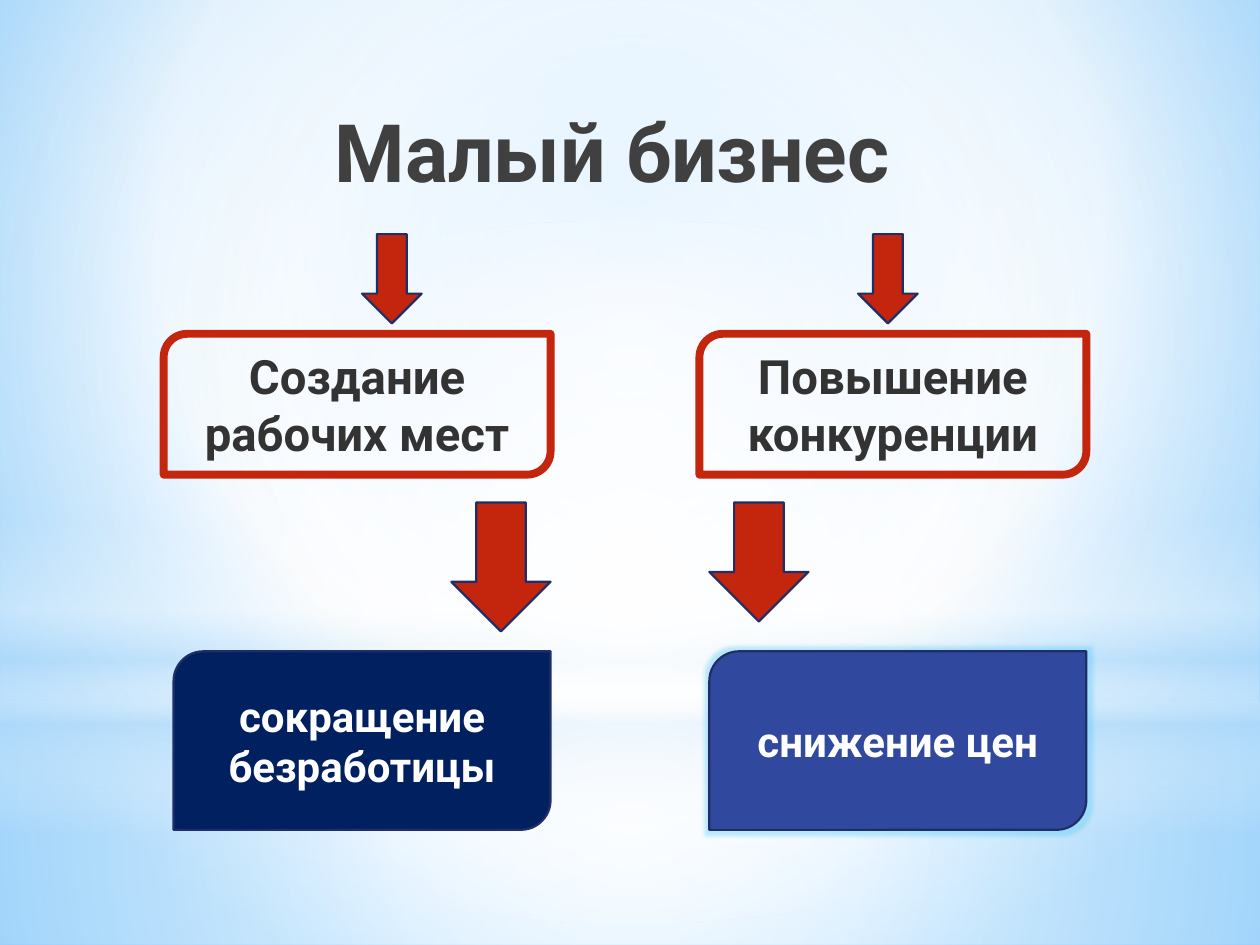
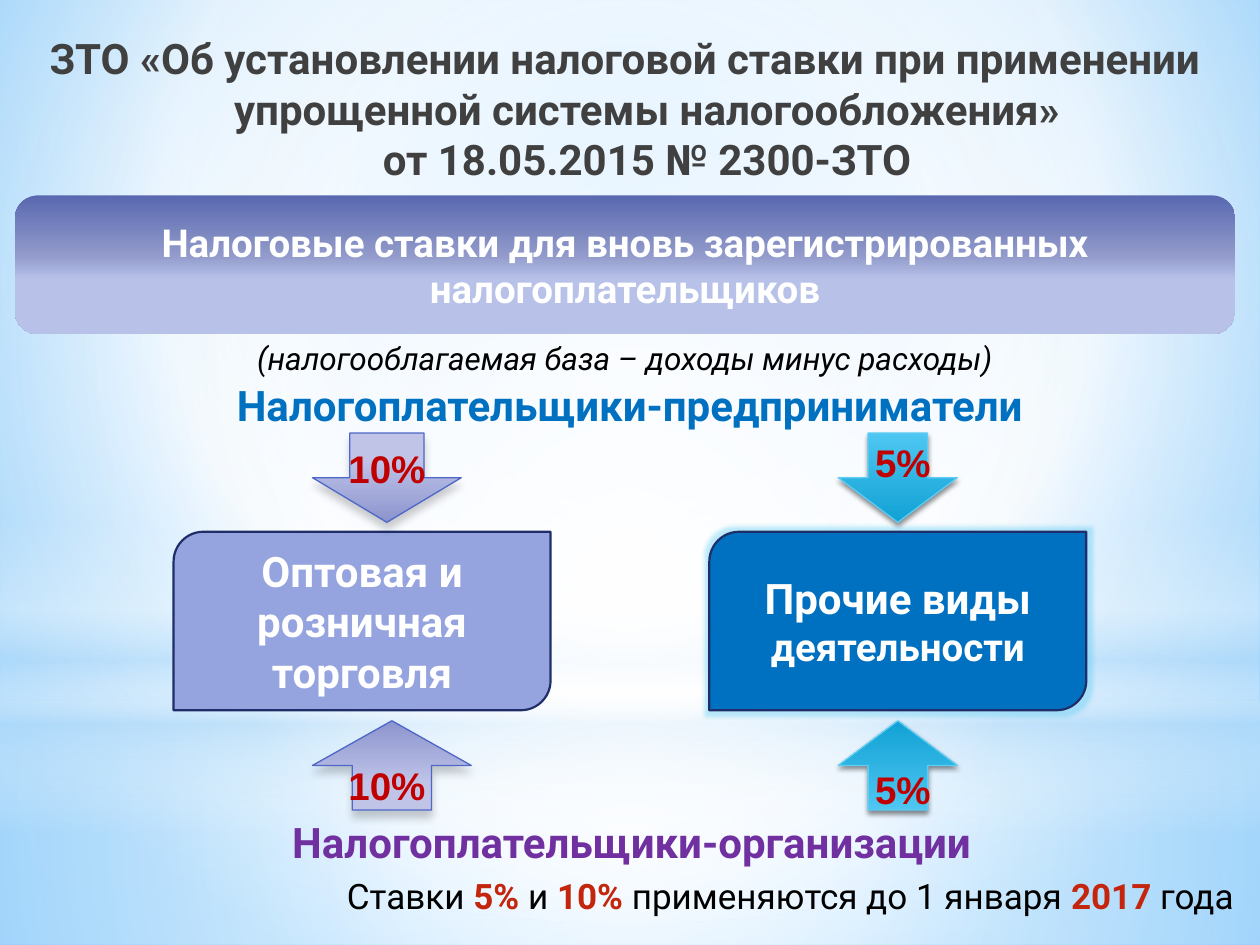
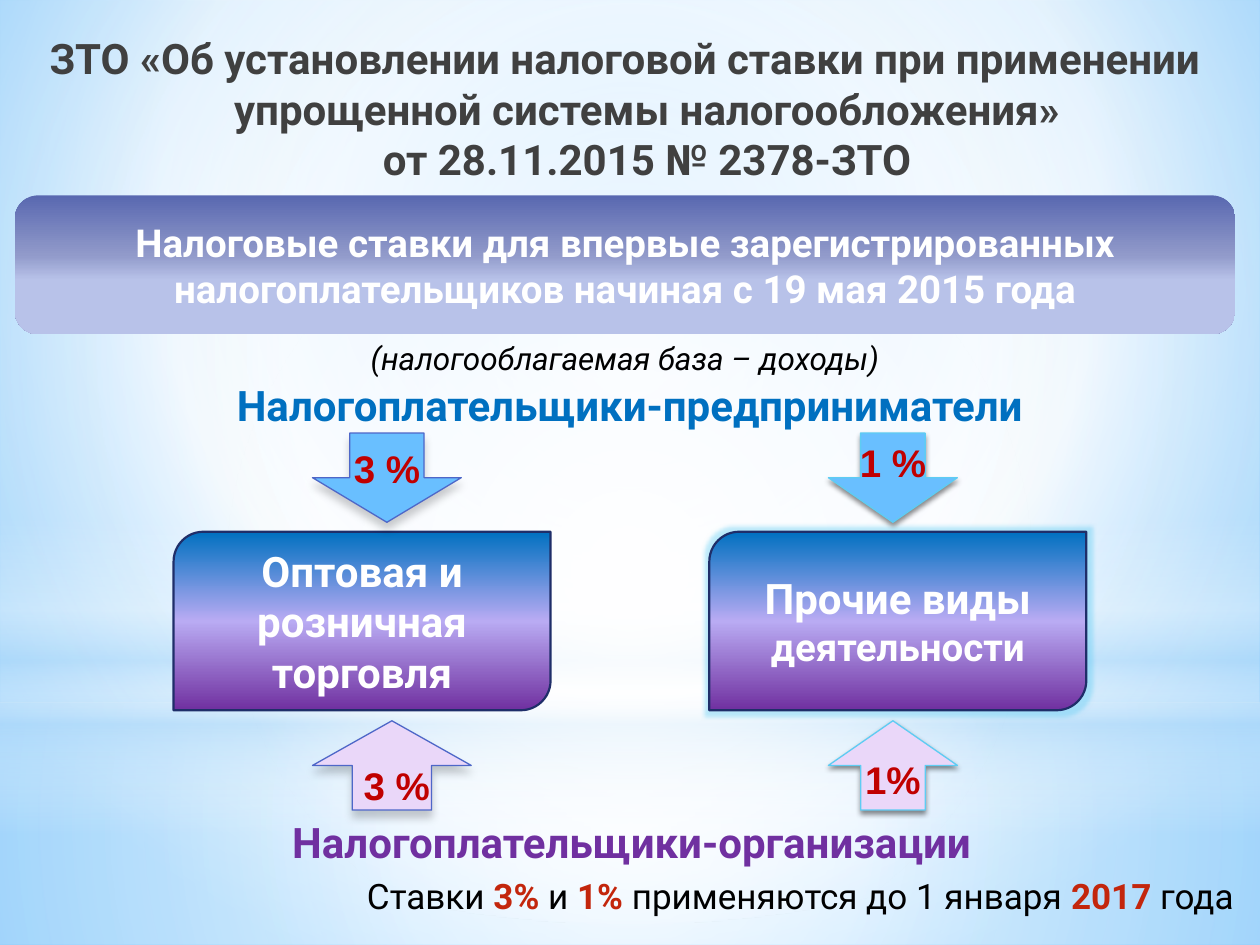
from dataclasses import dataclass
from typing import NamedTuple, Optional, Union

from lxml import etree
from pptx import Presentation, util as u
from pptx.dml.color import RGBColor
from pptx.enum import shapes, text
from pptx.oxml.ns import qn

CARD = shapes.MSO_SHAPE.ROUND_2_DIAG_RECTANGLE
ARROW = shapes.MSO_SHAPE.DOWN_ARROW
RECTANGLE = shapes.MSO_SHAPE.RECTANGLE
CENTER = text.PP_ALIGN.CENTER
RIGHT = text.PP_ALIGN.RIGHT
TOP = text.MSO_ANCHOR.TOP
MIDDLE = text.MSO_ANCHOR.MIDDLE


class Stop(NamedTuple):
    position: int
    color: str
    opacity: int = 100


class Gradient(NamedTuple):
    stops: tuple[Stop, ...]
    focus: Optional[tuple[int, int, int, int]] = None


Fill = Union[str, Gradient, None]


class Box(NamedTuple):
    left: float
    top: float
    width: float
    height: float

    def lengths(self) -> list[u.Length]:
        return [u.Cm(value) for value in self]


class Line(NamedTuple):
    color: str
    width: float


class Shadow(NamedTuple):
    opacity: int
    blur: float
    distance: float


class Style(NamedTuple):
    size: float
    color: str
    bold: bool = True
    italic: bool = False
    font: str = "Roboto"
    align: text.PP_ALIGN = CENTER
    spacing: Optional[float] = None


class Run(NamedTuple):
    text: str
    size: Optional[float] = None
    color: Optional[str] = None
    bold: Optional[bool] = None


CENTERED = (50, 50, 50, 50)


@dataclass(frozen=True)
class Theme:
    red: str = "C3260C"
    navy: str = "002060"
    indigo: str = "31489F"
    lavender: str = "95A4DE"
    blue: str = "0070C0"
    sky: str = "69BFFF"
    lilac: str = "EAD7F9"
    glow: str = "5ECCF3"
    outline: Line = Line("1F2E69", 1.25)
    frame: Line = Line("C3260C", 4.5)
    left_outline: Line = Line("4E67C8", 0.75)
    right_outline: Line = Line("5ECCF3", 0.75)
    left_shadow: Shadow = Shadow(20, 5, 4)
    right_shadow: Shadow = Shadow(45, 3.1, 1.8)
    main_title: Style = Style(46, "404040", align=RIGHT)
    law_title: Style = Style(24, "404040")
    framed: Style = Style(27, "333333")
    card: Style = Style(24, "FFFFFF")
    banner: Style = Style(22, "FFFFFF")
    tax_base: Style = Style(18, "000000", bold=False, italic=True)
    entrepreneurs: Style = Style(24, "0070C0", spacing=1.5)
    organizations: Style = Style(24, "7030A0", spacing=1.5)
    rate: Style = Style(22, "C00000", font="Arial")
    footer: Style = Style(20, "000000", bold=False, align=RIGHT)
    small_card: float = 22
    background: Gradient = Gradient(
        (Stop(0, "9ED5FF"), Stop(60, "FFFFFF"), Stop(100, "5BB9FF")), (20, 10, 20, 60))
    floor: Gradient = Gradient(
        (Stop(0, "FFFFFF", 91), Stop(37, "FFFFFF", 76), Stop(100, "B4DCFA", 79)), CENTERED)
    wall: Gradient = Gradient(
        (Stop(0, "FFFFFF", 89), Stop(48, "FFFFFF", 62), Stop(100, "B4DCFA", 79)), CENTERED)
    horizon: Gradient = Gradient(
        (Stop(0, "FFFFFF", 0), Stop(29, "FFFFFF", 30), Stop(45, "B4DCFA", 40),
         Stop(55, "FFFFFF", 26), Stop(65, "B4DCFA", 60), Stop(100, "FFFFFF", 0)))
    halo: Gradient = Gradient((Stop(0, "FFFFFF"), Stop(56, "FFFFFF", 0)), CENTERED)
    banner_fill: Gradient = Gradient(
        (Stop(0, "5968B0"), Stop(43, "919ACA"), Stop(61, "B8C2E9"), Stop(78, "B8C2E9")))
    violet_arrow: Gradient = Gradient((Stop(28, "C0C5E8"), Stop(100, "8C94CE")))
    cyan_arrow: Gradient = Gradient((Stop(0, "4EC7F2"), Stop(100, "11A1D4")))
    sunset: Gradient = Gradient((Stop(0, "0070C0"), Stop(50, "B9ABF3"), Stop(100, "7030A0")))


THEME = Theme()


@dataclass(frozen=True)
class RateArrow:
    box: Box
    fill: Fill
    label: str
    label_box: Box
    upward: bool = False


@dataclass(frozen=True)
class RateSlide:
    title: tuple[str, ...]
    banner: str
    tax_base: str
    card_fills: tuple[Fill, Fill]
    left_arrows: tuple[RateArrow, RateArrow]
    right_arrows: tuple[RateArrow, RateArrow]
    footer: tuple[Run, ...]


def add_color(parent, color: str, opacity: int = 100) -> None:
    node = etree.SubElement(parent, qn("a:srgbClr"), val=color)
    if opacity < 100:
        etree.SubElement(node, qn("a:alpha"), val=str(opacity * 1000))


def apply_gradient(owner, gradient: Gradient) -> None:
    node = etree.Element(qn("a:gradFill"), rotWithShape="1")
    stop_list = etree.SubElement(node, qn("a:gsLst"))
    for stop in gradient.stops:
        item = etree.SubElement(stop_list, qn("a:gs"), pos=str(stop.position * 1000))
        add_color(item, stop.color, stop.opacity)
    if gradient.focus:
        path = etree.SubElement(node, qn("a:path"), path="circle")
        sides = {side: str(value * 1000) for side, value in zip("ltrb", gradient.focus)}
        etree.SubElement(path, qn("a:fillToRect"), sides)
    else:
        etree.SubElement(node, qn("a:lin"), ang="5400000", scaled="0")
    empty = owner.find(f".//{qn('a:noFill')}")
    empty.getparent().replace(empty, node)


def add_effect(shape, name: str, color: str, opacity: int, **lengths: str) -> None:
    effects = shape.element.find(f".//{qn('a:effectLst')}")
    add_color(etree.SubElement(effects, qn(name), lengths), color, opacity)


def add_glow(shape) -> None:
    add_effect(shape, "a:glow", THEME.glow, 40, rad=str(u.Pt(5)))


def add_shadow(shape, shadow: Shadow) -> None:
    add_effect(shape, "a:outerShdw", "000000", shadow.opacity,
               blurRad=str(u.Pt(shadow.blur)), dist=str(u.Pt(shadow.distance)),
               dir="5400000", rotWithShape="0")


def write(shape, runs: tuple[Run, ...], style: Style, anchor=MIDDLE,
          margins: Optional[tuple[float, float]] = None, breaks: bool = False) -> None:
    frame = shape.text_frame
    frame.word_wrap = True
    frame.auto_size = text.MSO_AUTO_SIZE.NONE
    frame.vertical_anchor = anchor
    if margins:
        frame.margin_left = frame.margin_right = u.Cm(margins[0])
        frame.margin_top = frame.margin_bottom = u.Cm(margins[1])
    paragraph = frame.paragraphs[0]
    paragraph.alignment = style.align
    if style.spacing:
        paragraph.line_spacing = style.spacing
    font = paragraph.font
    font.name, font.size = style.font, u.Pt(style.size)
    font.bold, font.italic = style.bold, style.italic
    font.color.rgb = RGBColor.from_string(style.color)
    for index, part in enumerate(runs):
        if breaks and index:
            paragraph.add_line_break()
        run = paragraph.add_run()
        run.text = part.text
        if part.size:
            run.font.size = u.Pt(part.size)
        if part.color:
            run.font.color.rgb = RGBColor.from_string(part.color)
        if part.bold is not None:
            run.font.bold = part.bold


def add_figure(slide, kind, box: Box, fill: Fill = None, line: Optional[Line] = None):
    shape = slide.shapes.add_shape(kind, *box.lengths())
    shape.shadow.inherit = False
    if isinstance(fill, str):
        shape.fill.solid()
        shape.fill.fore_color.rgb = RGBColor.from_string(fill)
    else:
        shape.fill.background()
        if fill:
            apply_gradient(shape.element, fill)
    if line:
        shape.line.color.rgb = RGBColor.from_string(line.color)
        shape.line.width = u.Pt(line.width)
    else:
        shape.line.fill.background()
    return shape


def add_label(slide, box: Box, runs: tuple[Run, ...], style: Style,
              margins: tuple[float, float] = (0.25, 0.13)) -> None:
    write(slide.shapes.add_textbox(*box.lengths()), runs, style, TOP, margins)


def set_title(slide, box: Box, lines: tuple[str, ...], style: Style):
    title = slide.shapes.title
    title.left, title.top, title.width, title.height = box.lengths()
    write(title, tuple(Run(line) for line in lines), style, TOP, (0.25, 0.13), breaks=True)
    hanging = u.Cm(0.89)
    properties = title.element.find(f".//{qn('a:pPr')}")
    properties.set("marL", str(hanging))
    properties.set("indent", str(-hanging))
    return title


def decorate_master(presentation, slide) -> None:
    master = presentation.slide_master
    master.background.fill.background()
    apply_gradient(master.element, THEME.background)
    layers = (
        (RECTANGLE, Box(0, 14.17, 25.4, 4.88), THEME.floor),
        (RECTANGLE, Box(0, 0, 25.4, 14.17), THEME.wall),
        (RECTANGLE, Box(0, 10.46, 25.4, 6.35), THEME.horizon),
        (shapes.MSO_SHAPE.OVAL, Box(0, 4.45, 25.4, 14.17), THEME.halo),
    )
    for index, layer in enumerate(layers, start=2):
        master.shapes.element.insert(index, add_figure(slide, *layer).element)


def add_cards(slide, top: float, fills: tuple[Fill, Fill],
              contents: tuple[tuple[Run, ...], ...]) -> None:
    for left, fill, runs in zip((3.5, 14.3), fills, contents):
        card = add_figure(slide, CARD, Box(left, top, 7.6, 3.6), fill, THEME.outline)
        write(card, runs, THEME.card)
    add_glow(card)


def build_business_slide(slide) -> None:
    title = set_title(slide, Box(0.5, 1.93, 18.1, 3.18), ("Малый бизнес",), THEME.main_title)
    title.text_frame.margin_right = u.Cm(0.67)
    for left, caption in ((3.3, "Создание рабочих мест"), (14.1, "Повышение конкуренции")):
        frame = add_figure(slide, CARD, Box(left, 6.73, 7.8, 2.84), None, THEME.frame)
        write(frame, (Run(caption),), THEME.framed)
    for box in (Box(7.3, 4.72, 1.2, 1.8), Box(17.3, 4.72, 1.2, 1.8),
                Box(9.1, 10.13, 2, 2.6), Box(14.3, 10.13, 2, 2.4)):
        add_figure(slide, ARROW, box, THEME.red, THEME.outline)
    add_cards(slide, 13.13, (THEME.navy, THEME.indigo),
              ((Run("сокращение безработицы"),), (Run("снижение цен"),)))


def add_rate_arrows(slide, arrows: tuple[RateArrow, ...], line: Line, shadow: Shadow) -> None:
    for arrow in arrows:
        shape = add_figure(slide, ARROW, arrow.box, arrow.fill, line)
        shape.rotation = 180 if arrow.upward else 0
        add_shadow(shape, shadow)
        add_label(slide, arrow.label_box, (Run(arrow.label),), THEME.rate, (0, 0.13))


def build_rate_slide(slide, content: RateSlide) -> None:
    set_title(slide, Box(0.5, 0.53, 24.2, 4.8), content.title, THEME.law_title)
    banner = add_figure(slide, shapes.MSO_SHAPE.ROUNDED_RECTANGLE,
                        Box(0.3, 3.94, 24.6, 2.8), THEME.banner_fill)
    write(banner, (Run(content.banner),), THEME.banner)
    add_label(slide, Box(3.7, 6.7, 17.8, 1.02), (Run(content.tax_base),), THEME.tax_base)
    add_label(slide, Box(4.1, 7.14, 17.2, 1), (Run("Налогоплательщики-предприниматели"),),
              THEME.entrepreneurs, (0, 0))
    add_label(slide, Box(3.3, 15.93, 18.87, 1.1), (Run("Налогоплательщики-организации"),),
              THEME.organizations, (0.03, 0.03))
    add_cards(slide, 10.72, content.card_fills,
              ((Run("Оптовая и розничная торговля"),),
               (Run("Прочие виды "), Run("деятельности", THEME.small_card))))
    add_rate_arrows(slide, content.left_arrows, THEME.left_outline, THEME.left_shadow)
    add_rate_arrows(slide, content.right_arrows, THEME.right_outline, THEME.right_shadow)
    add_label(slide, Box(2.5, 17.53, 22.6, 0.86), content.footer, THEME.footer, (0.23, 0.1))


def left_pair(fills: tuple[Fill, Fill], label: str, lower_label: float) -> tuple:
    return (RateArrow(Box(6.3, 8.73, 3, 1.8), fills[0], label, Box(6.3, 8.84, 3, 1.1)),
            RateArrow(Box(6.3, 14.53, 3.2, 1.8), fills[1], label,
                      Box(lower_label, 15.24, 3, 1.1), True))


def right_pair(fills: tuple[Fill, Fill], labels: tuple[str, str], left: float,
               width: float, lower_top: float) -> tuple:
    return (RateArrow(Box(left, 8.73, width, 1.8), fills[0], labels[0],
                      Box(left + 0.4, 8.73, 1.8, 1)),
            RateArrow(Box(left, 14.53, width, 1.8), fills[1], labels[1],
                      Box(left + 0.4, lower_top, 1.8, 1), True))


def footer_runs(first: str, second: str) -> tuple[Run, ...]:
    def accent(words: str) -> Run:
        return Run(words, color=THEME.red, bold=True)

    return (Run("Ставки "), accent(first), Run(" и "), accent(second),
            Run(" применяются до 1 января "), accent("2017 "), Run("года"))


LAW = "ЗТО «Об установлении налоговой ставки при применении упрощенной системы налогообложения»"
PASTEL = (THEME.sky, THEME.lilac)
RATE_SLIDES = (
    RateSlide(
        (LAW, "от 18.05.2015 № 2300-ЗТО"),
        "Налоговые ставки для вновь зарегистрированных налогоплательщиков",
        "(налогооблагаемая база – доходы минус расходы)",
        (THEME.lavender, THEME.blue),
        left_pair((THEME.violet_arrow,) * 2, "10%", 6.3),
        right_pair((THEME.cyan_arrow,) * 2, ("5%", "5%"), 16.9, 2.4, 15.32),
        footer_runs("5%", "10%"),
    ),
    RateSlide(
        (LAW, "от 28.11.2015 № 2378-ЗТО"),
        "Налоговые ставки для впервые зарегистрированных налогоплательщиков "
        "начиная с 19 мая 2015 года",
        "(налогооблагаемая база – доходы)",
        (THEME.sunset, THEME.sunset),
        left_pair(PASTEL, "3 %", 6.5),
        right_pair(PASTEL, ("1 %", "1%"), 16.7, 2.6, 15.11),
        footer_runs("3%", "1%"),
    ),
)


def main() -> None:
    presentation = Presentation()
    presentation.slide_width, presentation.slide_height = u.Cm(25.4), u.Cm(19.05)
    title_only = presentation.slide_layouts[5]
    business = presentation.slides.add_slide(title_only)
    decorate_master(presentation, business)
    build_business_slide(business)
    for content in RATE_SLIDES:
        build_rate_slide(presentation.slides.add_slide(title_only), content)
    presentation.save("out.pptx")


if __name__ == "__main__":
    main()
